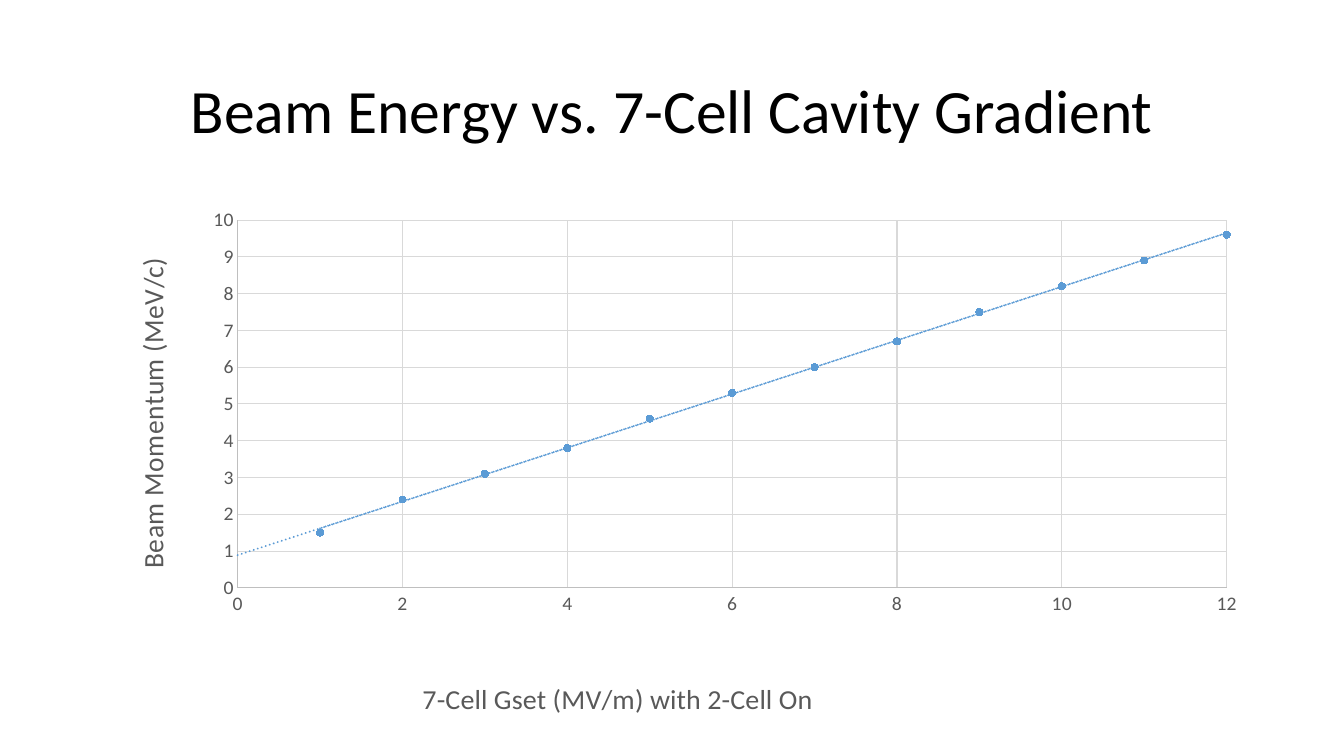
from dataclasses import dataclass

from pptx import Presentation
from pptx.chart.axis import ValueAxis
from pptx.chart.data import XyChartData
from pptx.dml.color import RGBColor
from pptx.enum.chart import XL_CHART_TYPE, XL_MARKER_STYLE, XL_TICK_MARK
from pptx.enum.text import MSO_ANCHOR, PP_ALIGN
from pptx.oxml import parse_xml
from pptx.oxml.ns import nsdecls, qn
from pptx.util import Inches, Pt

SCATTER = XL_CHART_TYPE.XY_SCATTER
CIRCLE = XL_MARKER_STYLE.CIRCLE
NO_TICK = XL_TICK_MARK.NONE
MIDDLE = MSO_ANCHOR.MIDDLE
CENTER = PP_ALIGN.CENTER

FONT = "Calibri"
BLACK, GRAY, AXIS_GRAY, GRID_GRAY, BLUE = "000000", "595959", "BFBFBF", "D9D9D9", "5B9BD5"
MOMENTA = [1.5, 2.4, 3.1, 3.8, 4.6, 5.3, 6, 6.7, 7.5, 8.2, 8.9, 9.6]


@dataclass
class AxisSpec:
    title: str
    maximum: float
    step: float
    title_left: float
    title_top: float
    rotation: int


GRADIENT_AXIS = AxisSpec("7-Cell Gset (MV/m) with 2-Cell On", 12, 2, 0.28, 0.92, 0)
MOMENTUM_AXIS = AxisSpec("Beam Momentum (MeV/c)", 10, 1, 0.03, 0.11, -90)


def color(value: str) -> RGBColor:
    return RGBColor.from_string(value)


def format_font(font, *, size: float, fill: str) -> None:
    font.name = FONT
    font.size = Pt(size)
    font.bold = False
    font.color.rgb = color(fill)


def write_text(text_frame, text: str, *, size: float, fill: str,
               spacing: float = 1.0) -> None:
    paragraph = text_frame.paragraphs[0]
    paragraph.alignment = CENTER
    paragraph.line_spacing = spacing
    run = paragraph.add_run()
    run.text = text
    format_font(run.font, size=size, fill=fill)


def format_line(line, fill: str) -> None:
    line.color.rgb = color(fill)
    line.width = Pt(0.75)


def set_layout(element, index: int, **values: float) -> None:
    """Place a chart part by fractions of the chart area."""
    for old_layout in element.findall(qn("c:layout")):
        element.remove(old_layout)
    target = '<c:layoutTarget val="inner"/>' if "w" in values else ""
    modes = '<c:xMode val="edge"/><c:yMode val="edge"/>'
    sizes = "".join(f'<c:{name} val="{value}"/>' for name, value in values.items())
    element.insert(index, parse_xml(
        f'<c:layout {nsdecls("c")}><c:manualLayout>{target}{modes}{sizes}'
        "</c:manualLayout></c:layout>"))


def format_axis(axis: ValueAxis, spec: AxisSpec) -> None:
    axis.minimum_scale, axis.maximum_scale = 0, spec.maximum
    axis.major_unit = spec.step
    axis.major_tick_mark = axis.minor_tick_mark = NO_TICK
    axis.has_major_gridlines = True
    format_line(axis.major_gridlines.format.line, GRID_GRAY)
    format_line(axis.format.line, AXIS_GRAY)
    format_font(axis.tick_labels.font, size=14, fill=GRAY)
    axis.tick_labels.number_format = "General"
    axis.tick_labels.number_format_is_linked = False

    title = axis.axis_title
    write_text(title.text_frame, spec.title, size=20, fill=GRAY)
    body = title._element.find(".//" + qn("a:bodyPr"))
    body.set("rot", str(spec.rotation * 60000))
    body.set("vert", "horz")
    set_layout(title._element, 1, x=spec.title_left, y=spec.title_top)


def add_trendline(series, backward: float) -> None:
    extension = f'<c:backward val="{backward}"/>' if backward else ""
    trendline = parse_xml(
        f'<c:trendline {nsdecls("c", "a")}><c:spPr><a:ln w="{Pt(1.5)}" cap="rnd">'
        f'<a:solidFill><a:srgbClr val="{BLUE}"/></a:solidFill><a:prstDash val="sysDot"/>'
        f'</a:ln></c:spPr><c:trendlineType val="linear"/>{extension}'
        '<c:dispRSqr val="0"/><c:dispEq val="0"/></c:trendline>')
    series._element.find(qn("c:xVal")).addprevious(trendline)


def add_momentum_chart(slide) -> None:
    data = XyChartData()
    points = data.add_series("Series 1")
    for gradient, momentum in enumerate(MOMENTA, start=1):
        points.add_data_point(gradient, momentum)
    chart = slide.shapes.add_chart(
        SCATTER, Inches(0.92), Inches(2), Inches(11.5), Inches(5.19), data).chart
    chart.has_legend = False
    chart.has_title = False
    format_font(chart.font, size=10, fill=BLACK)

    # Axes and plot area
    format_axis(chart.category_axis, GRADIENT_AXIS)
    format_axis(chart.value_axis, MOMENTUM_AXIS)
    plot_area = chart._chartSpace.find(".//" + qn("c:plotArea"))
    set_layout(plot_area, 0, x=0.125, y=0.036, w=0.853, h=0.716)

    # Markers and linear fits, one of them reaching back to zero gradient
    chart.plots[0].vary_by_categories = False
    series = chart.plots[0].series[0]
    series.format.line.fill.background()
    series.marker.style = CIRCLE
    series.marker.size = 5
    series.marker.format.fill.solid()
    series.marker.format.fill.fore_color.rgb = color(BLUE)
    format_line(series.marker.format.line, BLUE)
    for backward in (0, 1):
        add_trendline(series, backward)


def main() -> None:
    presentation = Presentation()
    presentation.slide_width = Inches(13.33)
    presentation.slide_height = Inches(7.5)
    slide = presentation.slides.add_slide(presentation.slide_layouts[6])

    # Title
    title = slide.shapes.add_textbox(Inches(0.92), Inches(0.4), Inches(11.5), Inches(1.45))
    title.text_frame.word_wrap = True
    title.text_frame.vertical_anchor = MIDDLE
    write_text(title.text_frame, "Beam Energy vs. 7-Cell Cavity Gradient",
               size=44, fill=BLACK, spacing=0.9)

    # Chart
    add_momentum_chart(slide)
    presentation.save("out.pptx")


if __name__ == "__main__":
    main()
